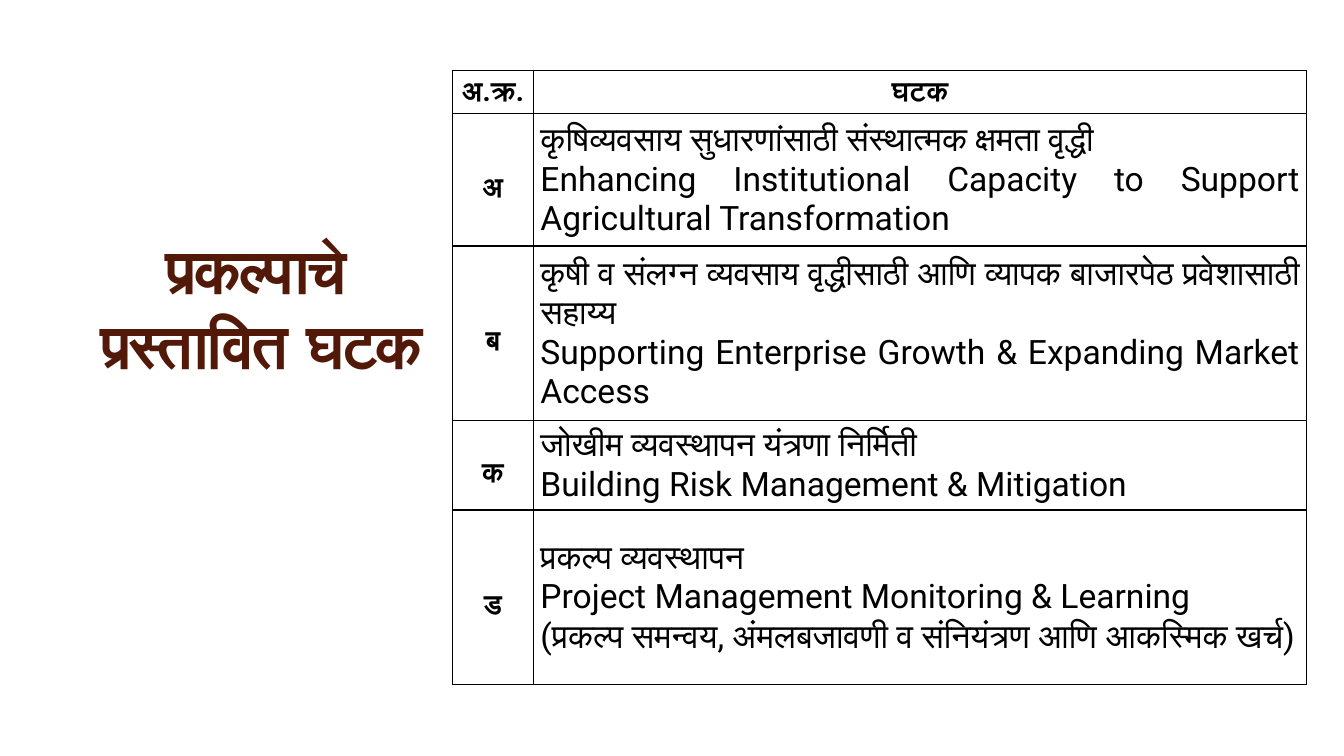
from lxml.etree import SubElement
from pptx import Presentation
from pptx.dml.color import RGBColor
from pptx.enum.text import MSO_ANCHOR, MSO_AUTO_SIZE, PP_ALIGN
from pptx.oxml.ns import qn
from pptx.util import Inches, Pt

FONT = "Roboto"
BROWN = RGBColor(0x52, 0x18, 0x08)
BLACK = RGBColor(0x00, 0x00, 0x00)

TITLE = "प्रकल्पाचे \nप्रस्तावित  घटक"
HEADINGS = ("अ.क्र.", "घटक")
COMPONENTS = [
    ("अ", "कृषिव्यवसाय सुधारणांसाठी संस्थात्मक क्षमता वृद्धी\n"
          "Enhancing Institutional Capacity to Support Agricultural Transformation"),
    ("ब", "कृषी व संलग्न व्यवसाय वृद्धीसाठी आणि व्यापक बाजारपेठ प्रवेशासाठी सहाय्य\n"
          "Supporting Enterprise Growth & Expanding Market Access"),
    ("क", "जोखीम व्यवस्थापन यंत्रणा निर्मिती\n"
          "Building Risk Management & Mitigation"),
    ("ड", "प्रकल्प व्यवस्थापन\n"
          "Project Management Monitoring & Learning\n"
          "(प्रकल्प समन्वय, अंमलबजावणी व संनियंत्रण आणि आकस्मिक खर्च)"),
]
COLUMN_WIDTHS = (0.8, 7.67)
ROW_HEIGHTS = (0.43, 1.31, 1.73, 0.89, 1.73)


def format_text(frame, size, color, bold, align, line_spacing=None):
    """Format every paragraph and run of a text frame alike."""
    for paragraph in frame.paragraphs:
        paragraph.alignment = align
        paragraph.line_spacing = line_spacing
        for run in paragraph.runs:
            run.font.name = FONT
            run.font.size = Pt(size)
            run.font.bold = bold
            run.font.color.rgb = color
            SubElement(run.font._element, qn("a:cs"), typeface=FONT)


def add_title(slide):
    """Place the slide title to the left of the table."""
    title = slide.shapes.title
    title.left, title.top = Inches(0.71), Inches(0.7)
    title.width, title.height = Inches(3.78), Inches(4.78)
    frame = title.text_frame
    frame.text = TITLE
    frame.word_wrap = True
    frame.auto_size = MSO_AUTO_SIZE.NONE
    frame.vertical_anchor = MSO_ANCHOR.MIDDLE
    format_text(frame, 44, BROWN, True, PP_ALIGN.CENTER, 0.9)
    for paragraph in frame.paragraphs:
        paragraph.space_before = Pt(0)
        paragraph.space_after = Pt(6)
        for run in paragraph.runs:
            run.font._element.set("spc", "-300")


def add_borders(cell):
    """Draw a thin black line on all four sides of a cell."""
    properties = cell._tc.get_or_add_tcPr()
    for side in ("a:lnL", "a:lnR", "a:lnT", "a:lnB"):
        line = SubElement(properties, qn(side), w=str(Pt(1)))
        fill = SubElement(line, qn("a:solidFill"))
        SubElement(fill, qn("a:srgbClr"), val=str(BLACK))


def fill_cell(cell, text, size, bold, align, line_spacing=None):
    """Write one bordered, unfilled table cell."""
    cell.text_frame.text = text
    cell.vertical_anchor = MSO_ANCHOR.MIDDLE
    cell.margin_left = cell.margin_right = Inches(0.07)
    cell.margin_top = cell.margin_bottom = Inches(0)
    add_borders(cell)
    cell.fill.background()
    format_text(cell.text_frame, size, BLACK, bold, align, line_spacing)


def add_components_table(slide):
    """Add the table of proposed project components."""
    table = slide.shapes.add_table(
        len(ROW_HEIGHTS), len(COLUMN_WIDTHS), Inches(4.49), Inches(0.7),
        Inches(sum(COLUMN_WIDTHS)), Inches(sum(ROW_HEIGHTS))).table
    table.horz_banding = False
    for column, width in zip(table.columns, COLUMN_WIDTHS):
        column.width = Inches(width)
    for row, height in zip(table.rows, ROW_HEIGHTS):
        row.height = Inches(height)
    for column, heading in enumerate(HEADINGS):
        fill_cell(table.cell(0, column), heading, 20, True, PP_ALIGN.CENTER)
    for row, (letter, component) in enumerate(COMPONENTS, start=1):
        fill_cell(table.cell(row, 0), letter, 20, True, PP_ALIGN.CENTER, 1.5)
        fill_cell(table.cell(row, 1), component, 24, False, PP_ALIGN.JUSTIFY)


def main():
    """Build and save the slide."""
    presentation = Presentation()
    presentation.slide_width = Inches(13.33)
    presentation.slide_height = Inches(7.5)
    slide = presentation.slides.add_slide(presentation.slide_layouts[5])
    add_title(slide)
    add_components_table(slide)
    presentation.save("out.pptx")


if __name__ == "__main__":
    main()
